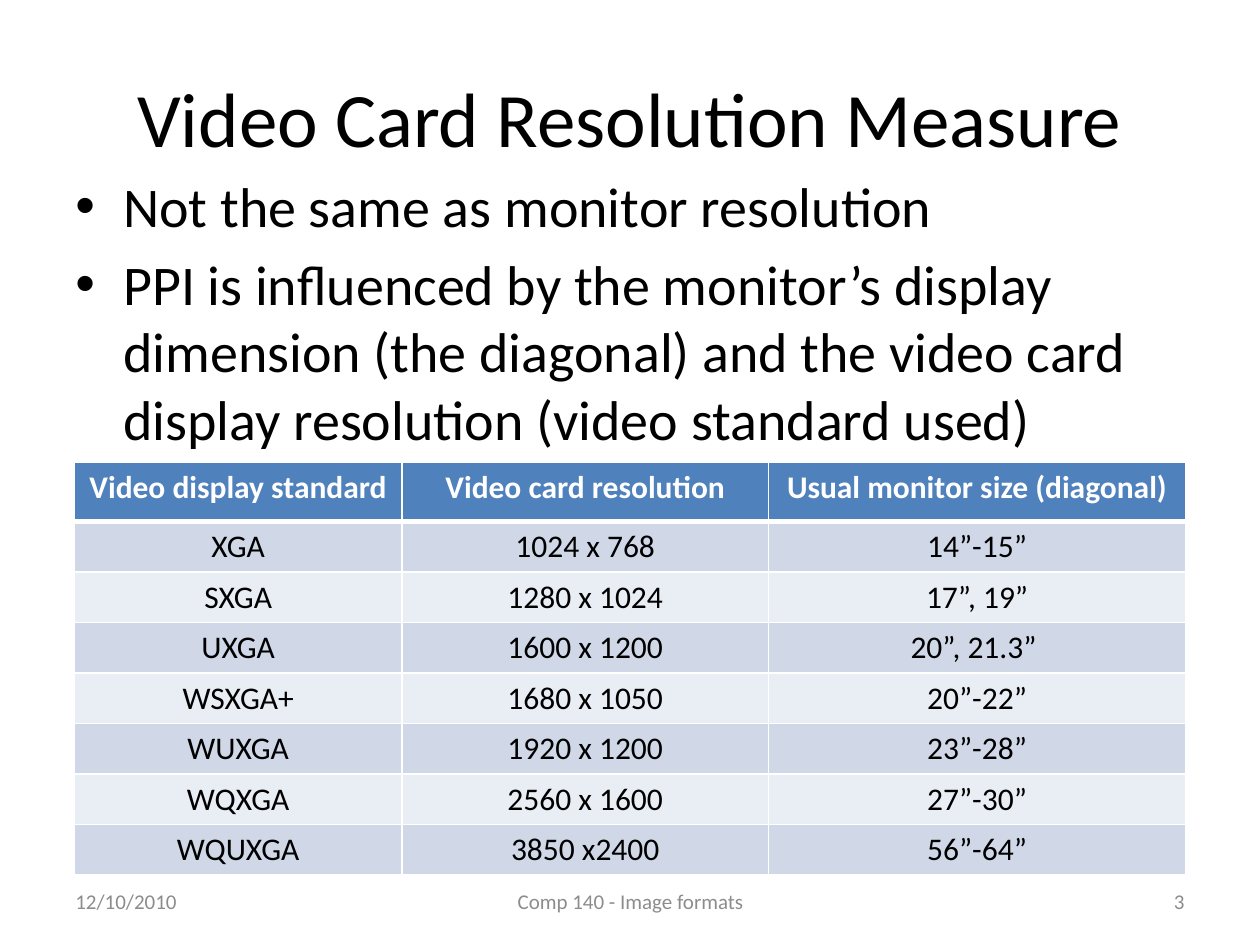
import pptx
import pptx.dml.color
import pptx.enum.text
import pptx.oxml.ns
import pptx.util
from lxml import etree

Inches, Pt = pptx.util.Inches, pptx.util.Pt
RGB = pptx.dml.color.RGBColor.from_string
ALIGN, ANCHOR = pptx.enum.text.PP_ALIGN, pptx.enum.text.MSO_ANCHOR
qn = pptx.oxml.ns.qn

# Content
TITLE = "Video Card Resolution Measure"
BULLETS = [
    "Not the same as monitor resolution",
    "PPI is influenced by the monitor’s display dimension (the diagonal) "
    "and the video card display resolution (video standard used)",
]
ROWS = [
    ("Video display standard", "Video card resolution", "Usual monitor size (diagonal)"),
    ("XGA", "1024 x 768", "14”-15”"),
    ("SXGA", "1280 x 1024", "17”, 19”"),
    ("UXGA", "1600 x 1200", "20”, 21.3” "),
    ("WSXGA+", "1680 x 1050", "20”-22”"),
    ("WUXGA", "1920 x 1200", "23”-28”"),
    ("WQXGA", "2560 x 1600", "27”-30”"),
    ("WQUXGA", "3850 x2400", "56”-64”"),
]
FOOTERS = [  # text, left, width, alignment
    ("12/10/2010", 0.5, 2.33, ALIGN.LEFT),
    ("Comp 140 - Image formats", 3.42, 3.17, ALIGN.CENTER),
    ("3", 7.17, 2.33, ALIGN.RIGHT),
]
COL_WIDTHS = [2.6, 2.91, 3.31]
HEADER_H, ROW_H = 0.47, 0.4

# Theme
THEME = {
    "title": {"size": Pt(44), "color": "000000"},
    "body": {"size": Pt(32), "color": "000000"},
    "head": {"size": Pt(18), "color": "FFFFFF", "bold": True},
    "cell": {"size": Pt(18), "color": "000000", "bold": False},
    "footer": {"size": Pt(12), "color": "8C8C8C"},
    "head_fill": "4F81BD",
    "bands": ("D0D8E8", "E9EDF4"),
    "border": "FFFFFF",
}


def write(p, text, style, align):
    p.alignment = align
    r = p.add_run()
    r.text = text
    r.font.name = "Calibri"
    for name, value in THEME[style].items():
        if name == "color":
            r.font.color.rgb = RGB(value)
        else:
            setattr(r.font, name, value)


def add_text(slide, box, texts, style, align, anchor=ANCHOR.MIDDLE):
    tf = slide.shapes.add_textbox(*map(Inches, box)).text_frame
    tf.word_wrap = True
    tf.vertical_anchor = anchor
    for i, text in enumerate(texts):
        write(tf.paragraphs[0] if i == 0 else tf.add_paragraph(), text, style, align)
    return tf


def add_bullet(p):
    pPr = p._p.get_or_add_pPr()
    pPr.set("marL", str(Inches(0.38)))
    pPr.set("indent", str(-Inches(0.38)))
    p.space_before = Pt(6.4)
    etree.SubElement(pPr, qn("a:buFont")).set("typeface", "Arial")
    etree.SubElement(pPr, qn("a:buChar")).set("char", "•")


def set_borders(cell, widths):
    tcPr = cell._tc.get_or_add_tcPr()
    for i, (side, width) in enumerate(widths.items()):
        ln = etree.Element(qn(f"a:{side}"), w=str(Pt(width)))
        fill = etree.SubElement(ln, qn("a:solidFill"))
        etree.SubElement(fill, qn("a:srgbClr")).set("val", THEME["border"])
        tcPr.insert(i, ln)


def add_standards_table(slide):
    height = HEADER_H + ROW_H * (len(ROWS) - 1)
    table = slide.shapes.add_table(
        len(ROWS), len(COL_WIDTHS),
        *map(Inches, (0.59, 3.67, sum(COL_WIDTHS), height))).table
    for col, width in zip(table.columns, COL_WIDTHS):
        col.width = Inches(width)
    for i, row in enumerate(ROWS):
        head = i == 0
        table.rows[i].height = Inches(HEADER_H if head else ROW_H)
        for j, text in enumerate(row):
            cell = table.cell(i, j)
            cell.fill.solid()
            cell.fill.fore_color.rgb = RGB(
                THEME["head_fill"] if head else THEME["bands"][(i - 1) % 2])
            if j == 0 and not head:
                cell.vertical_anchor = ANCHOR.MIDDLE
            write(cell.text_frame.paragraphs[0], text,
                  "head" if head else "cell", ALIGN.CENTER)
            set_borders(cell, {"lnL": 1, "lnR": 1, "lnT": 3 if i == 1 else 1,
                               "lnB": 3 if head else 1})


def main():
    prs = pptx.Presentation()
    prs.slide_width, prs.slide_height = Inches(10), Inches(7.5)
    slide = prs.slides.add_slide(prs.slide_layouts[6])

    # Title and bullets
    add_text(slide, (0.5, 0.3, 9, 1.25), [TITLE], "title", ALIGN.CENTER)
    tf = add_text(slide, (0.5, 1.31, 9, 5.39), BULLETS, "body", ALIGN.LEFT, ANCHOR.TOP)
    for p in tf.paragraphs:
        add_bullet(p)

    # Video standards
    add_standards_table(slide)

    # Footer
    for text, left, width, align in FOOTERS:
        add_text(slide, (left, 6.95, width, 0.4), [text], "footer", align)

    prs.save("out.pptx")


if __name__ == "__main__":
    main()
